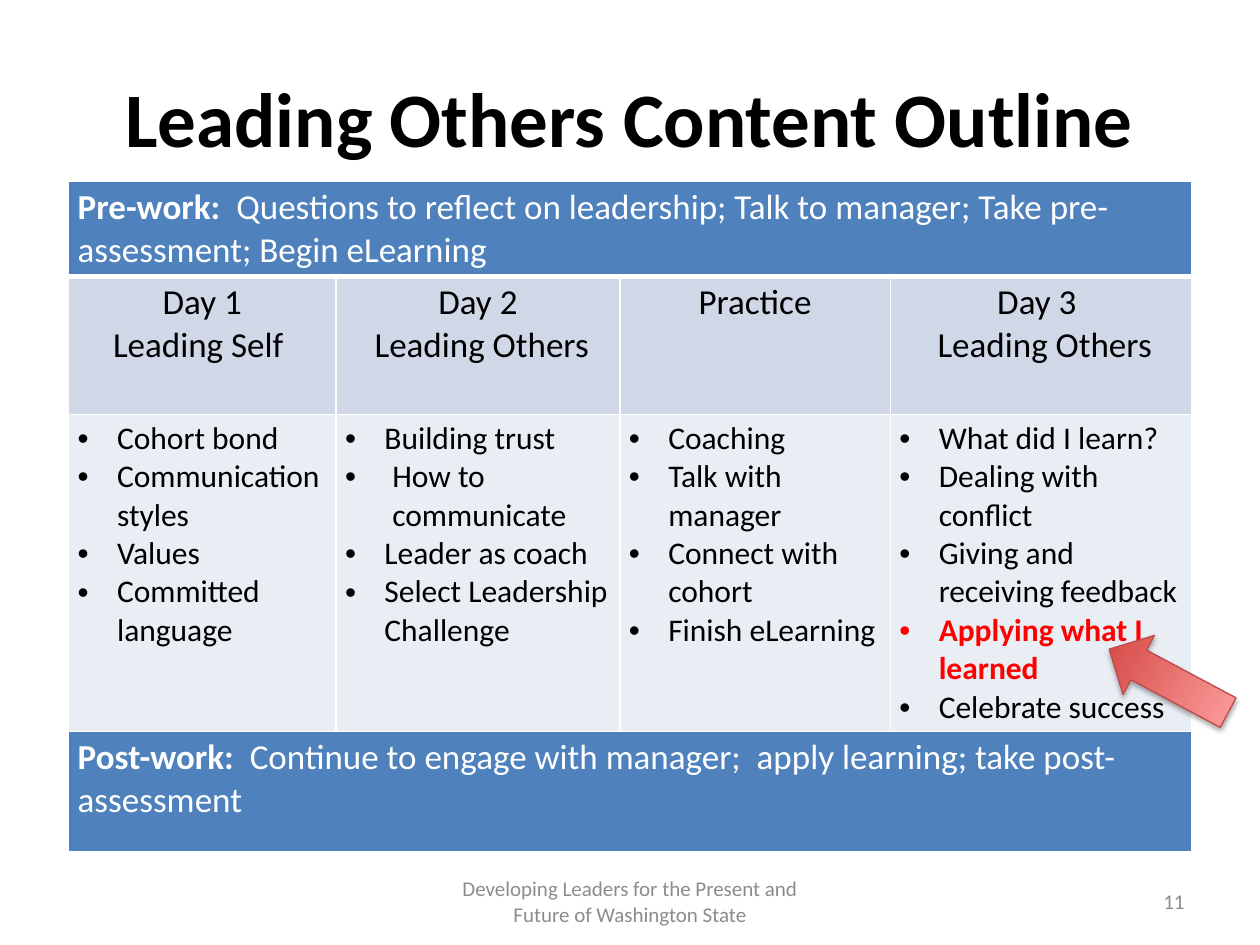
from lxml import etree
from pptx import Presentation
from pptx.dml.color import RGBColor
from pptx.enum.shapes import MSO_SHAPE
from pptx.enum.text import MSO_ANCHOR, PP_ALIGN
from pptx.oxml import parse_xml
from pptx.util import Pt

LEFT, MID, RIGHT = PP_ALIGN.LEFT, PP_ALIGN.CENTER, PP_ALIGN.RIGHT
MIDDLE = MSO_ANCHOR.MIDDLE
DOWN = MSO_SHAPE.DOWN_ARROW
NS = "http://schemas.openxmlformats.org/drawingml/2006/main"

# Content
TITLE = "Leading Others Content Outline"
PRE = ("Pre-work:  ", "Questions to reflect on leadership; Talk to manager; "
       "Take pre-assessment; Begin eLearning")
POST = ("Post-work:  ", "Continue to engage with manager;  apply learning; "
        "take post-assessment")
STAGES = [
    (["Day 1", "Leading Self "],
     ["Cohort bond", "Communication styles", "Values", "Committed language"]),
    (["Day 2", " Leading Others"],
     ["Building trust", "How to communicate", "Leader as coach",
      "Select Leadership Challenge"]),
    (["Practice"],
     ["Coaching", "Talk with manager", "Connect with cohort",
      "Finish eLearning"]),
    (["Day 3 ", " Leading Others"],
     ["What did I learn?", "Dealing with conflict",
      "Giving and receiving feedback", "Applying what I learned",
      "Celebrate success"]),
]
FOCUS = "Applying what I learned"
DEEP = "How to communicate"
FOOTER = "Developing Leaders for the Present and Future of Washington State"
NUMBER = "11"

# Theme and layout, lengths in points
THEME = {
    "font": "Calibri", "title": 44, "head": 20, "item": 18, "foot": 12,
    "ink": "000000", "white": "FFFFFF", "grey": "8C8C8C", "focus": "FF0000",
    "band": "4F81BD", "stage": "D0D8E8", "list": "E9EDF4",
    "dark": "D1403C", "light": "FFA6A5", "edge": "BF4C48",
}
COLS = [152.8, 162.2, 154.6, 172]
ROWS = [54, 79, 181, 69]
TOP, SIDE = 103.8, 39.2
INDENT, DEEPER = 22.5, 27


def rgb(name):
    return RGBColor.from_string(THEME[name])


def style(run, size, color, bold=False):
    font = run.font
    font.name, font.size, font.bold = THEME["font"], Pt(THEME[size]), bold
    font.color.rgb = rgb(color)


def write(frame, lines, size, color, align=LEFT, bold=False):
    frame.text = "\n".join(lines)
    for para in frame.paragraphs:
        para.alignment = align
        for run in para.runs:
            style(run, size, color, bold)


def bullet(para, indent):
    props = para._p.get_or_add_pPr()
    props.set("marL", str(Pt(indent)))
    props.set("indent", str(-Pt(indent)))
    etree.SubElement(props, f"{{{NS}}}buFont").set("typeface", "Arial")
    etree.SubElement(props, f"{{{NS}}}buChar").set("char", "•")


def edge(cell, widths):
    props = cell._tc.get_or_add_tcPr()
    for place, (side, width) in enumerate(widths.items()):
        props.insert(place, parse_xml(
            f'<a:ln{side} xmlns:a="{NS}" w="{Pt(width)}"><a:solidFill>'
            f'<a:srgbClr val="{THEME["white"]}"/></a:solidFill></a:ln{side}>'))


def band(row, parts):
    cell = grid.cell(row, 0)
    cell.merge(grid.cell(row, len(COLS) - 1))
    para = cell.text_frame.paragraphs[0]
    for text, bold in zip(parts, (True, False)):
        run = para.add_run()
        run.text = text
        style(run, "head", "white", bold)


def note(text, left, width, align):
    box = slide.shapes.add_textbox(Pt(left), Pt(500.5), Pt(width), Pt(28.8))
    frame = box.text_frame
    frame.word_wrap, frame.vertical_anchor = True, MIDDLE
    write(frame, [text], "foot", "grey", align)


deck = Presentation()
deck.slide_width, deck.slide_height = Pt(720), Pt(540)
slide = deck.slides.add_slide(deck.slide_layouts[5])

# Title
title = slide.shapes.title
title.left, title.top, title.width, title.height = Pt(36), Pt(21.6), Pt(648), Pt(90)
title.text_frame.vertical_anchor = MIDDLE
write(title.text_frame, [TITLE], "title", "ink", MID, True)

# Table grid, fills and borders
grid = slide.shapes.add_table(len(ROWS), len(COLS), Pt(SIDE), Pt(TOP),
                              Pt(sum(COLS)), Pt(sum(ROWS))).table
grid.first_row = grid.horz_banding = False
for col, width in zip(grid.columns, COLS):
    col.width = Pt(width)
for r, (row, fill) in enumerate(zip(grid.rows, ("band", "stage", "list", "band"))):
    row.height = Pt(ROWS[r])
    for cell in row.cells:
        cell.margin_left = cell.margin_right = Pt(5.2)
        cell.margin_top = cell.margin_bottom = Pt(2.6)
        cell.fill.solid()
        cell.fill.fore_color.rgb = rgb(fill)
        edge(cell, {"L": 1, "R": 1, "T": 3 if r == 1 else 1,
                    "B": 3 if r == 0 else 1})

# Table text
band(0, PRE)
for c, (head, items) in enumerate(STAGES):
    write(grid.cell(1, c).text_frame, head, "head", "ink", MID)
    frame = grid.cell(2, c).text_frame
    write(frame, items, "item", "ink")
    for para in frame.paragraphs:
        bullet(para, DEEPER if para.text == DEEP else INDENT)
        if para.text == FOCUS:
            style(para.runs[0], "item", "focus", True)
band(3, POST)

# Footer and slide number
note(FOOTER, 246, 228, MID)
note(NUMBER, 516, 168, RIGHT)

# Arrow to the focus item
arrow = slide.shapes.add_shape(DOWN, Pt(648.7), Pt(350.6), Pt(38.2), Pt(77))
arrow.rotation = 118.1
arrow.fill.gradient()
arrow.fill.gradient_angle = 90
for stop, name, at in zip(arrow.fill.gradient_stops, ("dark", "light"), (0, 1)):
    stop.color.rgb, stop.position = rgb(name), at
arrow.line.color.rgb, arrow.line.width = rgb("edge"), Pt(0.75)
arrow.shadow.inherit = False
glow = arrow._element.spPr.find(f"{{{NS}}}effectLst")
glow.append(parse_xml(
    f'<a:outerShdw xmlns:a="{NS}" blurRad="{Pt(3.1)}" dist="{Pt(1.8)}" '
    f'dir="5400000" rotWithShape="0"><a:srgbClr val="{THEME["ink"]}">'
    '<a:alpha val="35000"/></a:srgbClr></a:outerShdw>'))

deck.save("out.pptx")
